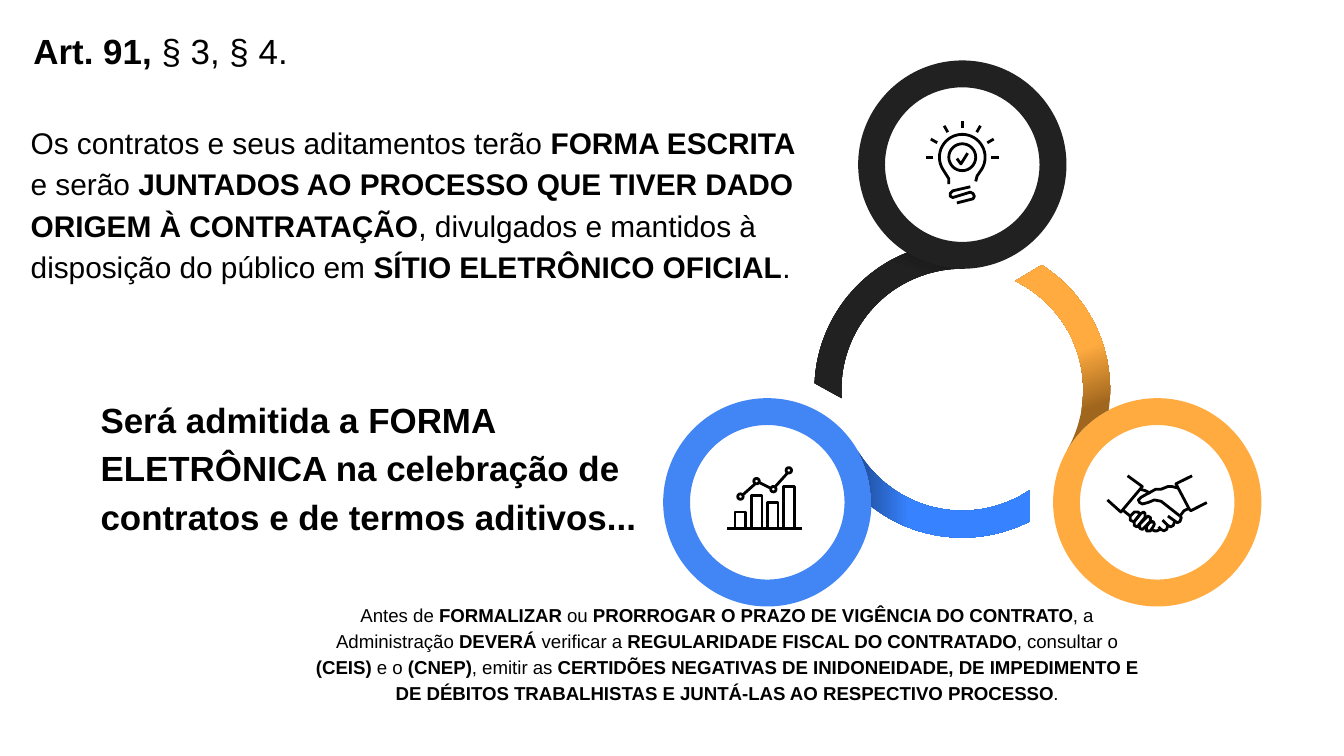
from math import cos, radians, sin

from pptx import Presentation
from pptx.dml.color import RGBColor
from pptx.enum.shapes import MSO_SHAPE as Preset
from pptx.enum.text import MSO_AUTO_SIZE as AutoSize, PP_ALIGN as Align
from pptx.util import Inches, Pt

BLACK = RGBColor(0x00, 0x00, 0x00)
CHARCOAL = RGBColor(0x21, 0x21, 0x21)
CHARCOAL_SHADE = RGBColor(0x14, 0x14, 0x14)
ORANGE = RGBColor(0xFF, 0xAB, 0x40)
ORANGE_SHADE = RGBColor(0xA0, 0x66, 0x1D)
BLUE = RGBColor(0x42, 0x85, 0xF4)
BLUE_TAIL = RGBColor(0x37, 0x82, 0xFF)
BLUE_SHADE = RGBColor(0x1F, 0x4D, 0x98)

RING_SIZE = 1.55
RING_RADIUS = RING_SIZE / 2
RING_WIDTH = 0.2
HUB_INNER = 0.9
HUB_OUTER = 1.1


def polar(center, radius, angle):
    x, y = center
    return x + radius * cos(radians(angle)), y + radius * sin(radians(angle))


def arc(center, radius, start, end, steps=32):
    return [polar(center, radius, start + (end - start) * step / steps)
            for step in range(steps + 1)]


def circle(center, radius):
    return arc(center, radius, 0, 360)[:-1]


def add_outline(slide, strokes):
    builder = None
    for points, closed in strokes:
        first, *rest = [(Inches(x), Inches(y)) for x, y in points]
        if builder is None:
            builder = slide.shapes.build_freeform(*first)
        else:
            builder.move_to(*first)
        builder.add_line_segments(rest, close=closed)
    shape = builder.convert_to_shape()
    shape.shadow.inherit = False
    return shape


def add_ring(slide, hub, angle, color, tail_stops, tail_angle):
    center = polar(hub, HUB_INNER + RING_RADIUS, angle)
    left, top = center[0] - RING_RADIUS, center[1] - RING_RADIUS
    ring = slide.shapes.add_shape(Preset.DONUT, Inches(left), Inches(top),
                                  Inches(RING_SIZE), Inches(RING_SIZE))
    ring.adjustments[0] = RING_WIDTH / RING_SIZE
    ring.shadow.inherit = False
    ring.fill.solid()
    ring.fill.fore_color.rgb = color
    ring.line.fill.background()

    points = (arc(center, RING_RADIUS, angle + 180, angle + 212)
              + arc(hub, HUB_OUTER, angle - 22, angle - 87.5)
              + arc(hub, HUB_INNER, angle - 94, angle))
    tail = add_outline(slide, [(points, True)])
    tail.line.fill.background()
    tail.fill.gradient()
    tail.fill.gradient_angle = 360 - tail_angle
    for stop, (position, stop_color) in zip(tail.fill.gradient_stops, tail_stops):
        stop.position = position
        stop.color.rgb = stop_color


def add_icon(slide, left, top, open_strokes, closed_strokes):
    strokes = [([(left + x / 100, top + y / 100) for x, y in points], closed)
               for group, closed in ((open_strokes, False), (closed_strokes, True))
               for points in group]
    icon = add_outline(slide, strokes)
    icon.fill.background()
    icon.line.color.rgb = BLACK
    icon.line.width = Pt(1.5)


def add_bulb(slide, left, top):
    center = (27, 27)
    glass = ([(17, 47), (17, 43)] + arc(center, 17, 148, 392)
             + [(38, 41), (37, 45)])
    screw = [(33, 49), (20, 52), (18, 54), (18, 56), (20, 57), (33, 53),
             (35, 54), (36, 56), (35, 58), (23, 61)]
    check = [(23, 28), (26, 32), (31, 24)]
    rays = [[polar(center, 21.5, angle), polar(center, 27, angle)]
            for angle in range(180, 361, 30)]
    add_icon(slide, left, top, [glass, screw, check, *rays], [circle(center, 10)])


def add_handshake(slide, left, top):
    open_strokes = [
        [(45, 30), (52, 35), (54, 34), (55, 31), (54, 30)],
        [(41, 33), (45, 37), (47, 38), (49, 37), (50, 34)],
        [(38, 38), (40, 40), (42, 41), (44, 40), (45, 37)],
        [(33, 40), (35, 41), (37, 41), (39, 40), (40, 39)],
        [(63, 0), (51, 6), (61, 25), (62, 26), (74, 20)],
        [(52, 9), (48, 8), (45, 8), (40, 10), (36, 10), (25, 16), (23, 18),
         (24, 20), (26, 21), (30, 20), (35, 18), (40, 19), (54, 30)],
        [(61, 24), (57, 26), (54, 30)],
        [(0, 18), (10, 27), (26, 8), (15, 0)],
        [(12, 26), (17, 30)],
        [(32, 13), (28, 11), (24, 10)],
    ]
    fingers = [
        [(19, 34), (17, 33), (17, 30), (20, 27), (23, 27), (24, 29), (20, 34)],
        [(23, 37), (28, 31), (28, 28), (27, 27), (25, 28), (20, 34), (20, 37), (22, 38)],
        [(27, 39), (32, 34), (32, 31), (30, 30), (29, 31), (24, 36), (24, 39), (26, 40)],
        [(34, 38), (35, 36), (34, 34), (31, 35), (29, 38), (29, 41), (32, 41)],
    ]
    add_icon(slide, left, top, open_strokes, fingers)


def add_bar_icon(slide, left, top):
    floor = 45
    bars = [[(x, y), (x, floor), (x + 8, floor), (x + 8, y)]
            for x, y in zip(range(6, 43, 12), (33, 21, 26, 14))]
    nodes = [circle(node, 2) for node in ((10, 21.5), (22, 10), (34.5, 16), (46, 2))]
    links = [[(0, floor), (56, floor)], [(12, 20), (21, 12)],
             [(24, 11), (32, 15)], [(36, 14), (45, 4)]]
    add_icon(slide, left, top, links, bars + nodes)


def add_text(slide, box, size, texts, bold_first=False, align=Align.LEFT,
             spacing=1.15, inset=0.1):
    shape = slide.shapes.add_textbox(*map(Inches, box))
    frame = shape.text_frame
    frame.word_wrap = True
    frame.margin_left = frame.margin_right = Inches(0.1)
    frame.margin_top = frame.margin_bottom = Inches(inset)
    paragraph = frame.paragraphs[0]
    paragraph.alignment = align
    paragraph.line_spacing = spacing
    paragraph.font.name = "Arial"
    paragraph.font.size = Pt(size)
    paragraph.font.color.rgb = BLACK
    for index, text in enumerate(texts):
        run = paragraph.add_run()
        run.text = text
        run.font.bold = (index % 2 == 0) == bold_first
    return frame


def add_diagram(slide, hub):
    x, y = hub
    add_ring(slide, hub, 30, ORANGE, [(0.22, ORANGE_SHADE), (0.51, ORANGE)], 250)
    add_ring(slide, hub, 270, CHARCOAL, [(0, CHARCOAL_SHADE), (0.2, CHARCOAL)], 110)
    add_ring(slide, hub, 150, BLUE, [(0, BLUE_SHADE), (0.3, BLUE_TAIL)], 0)
    add_bulb(slide, x - 0.27, y - 2)
    add_handshake(slide, x + 1.08, y + 0.64)
    add_bar_icon(slide, x - 1.75, y + 0.58)


def add_article_texts(slide):
    add_text(slide, (0.13, 0.79, 5.99, 0.79), 16, [
        "Os contratos e seus aditamentos terão ", "FORMA ESCRITA", " e serão ",
        "JUNTADOS AO PROCESSO QUE TIVER DADO ORIGEM À CONTRATAÇÃO",
        ", divulgados e mantidos à disposição do público em ",
        "SÍTIO ELETRÔNICO OFICIAL", "."])
    add_text(slide, (0.65, 2.82, 4.26, 0.79), 18.75, [
        "Será admitida a FORMA ELETRÔNICA na celebração de contratos "
        "e de termos aditivos..."], bold_first=True)
    add_text(slide, (2.21, 4.37, 6.4, 0.79), 10, [
        "Antes de ", "FORMALIZAR", " ou ",
        "PRORROGAR O PRAZO DE VIGÊNCIA DO CONTRATO", ", a Administração ",
        "DEVERÁ", " verificar a ", "REGULARIDADE FISCAL DO CONTRATADO",
        ", consultar o ", "(CEIS)", " e o ", "(CNEP)", ", emitir as ",
        "CERTIDÕES NEGATIVAS DE INIDONEIDADE, DE IMPEDIMENTO E DE DÉBITOS "
        "TRABALHISTAS E JUNTÁ-LAS AO RESPECTIVO PROCESSO", "."],
        align=Align.CENTER)
    title = add_text(slide, (-0.18, 0.17, 2.75, 0.42), 18.75,
                     ["Art. 91, ", "§ 3, § 4."], bold_first=True,
                     align=Align.CENTER, spacing=1.0, inset=0.05)
    title.auto_size = AutoSize.SHAPE_TO_FIT_TEXT


def main():
    presentation = Presentation()
    presentation.slide_width = Inches(10)
    presentation.slide_height = Inches(10) * 9 // 16
    slide = presentation.slides.add_slide(presentation.slide_layouts[6])
    add_diagram(slide, (7.16, 2.9))
    add_article_texts(slide)
    presentation.save("out.pptx")


if __name__ == "__main__":
    main()
